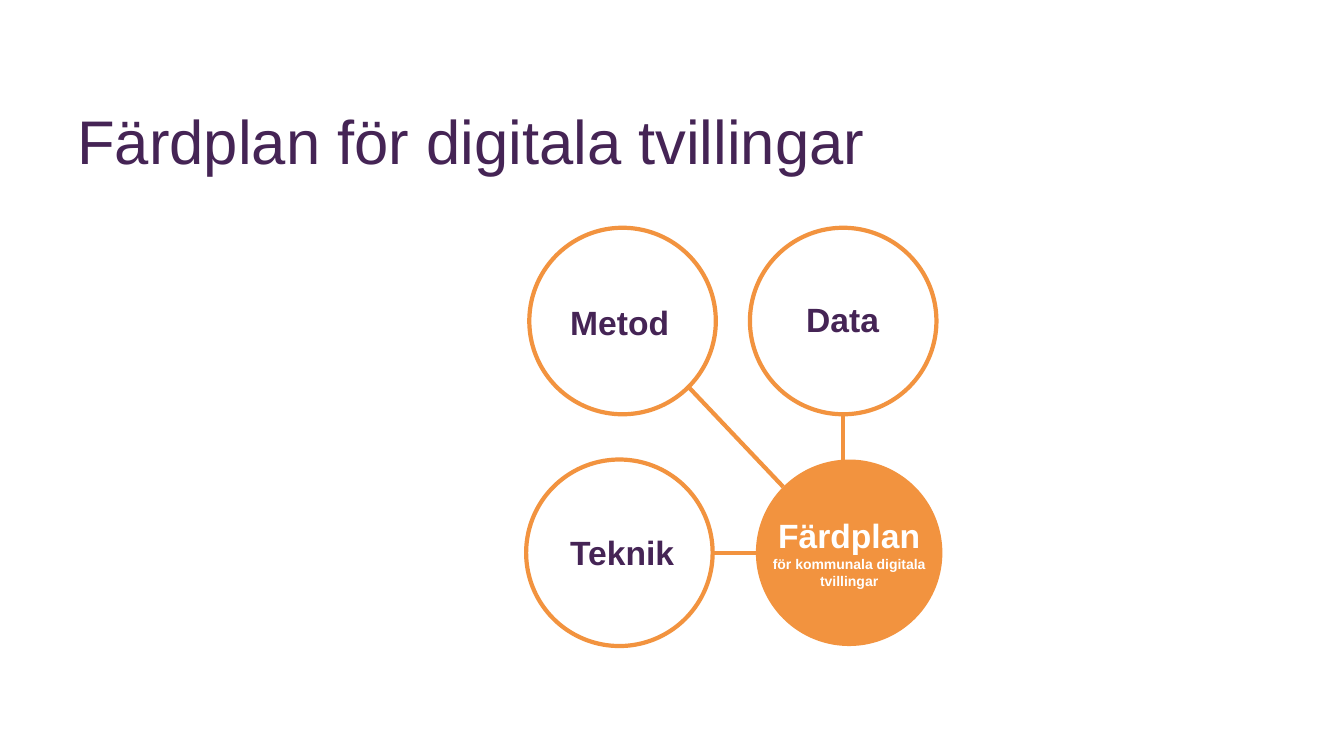
from collections import namedtuple
from dataclasses import dataclass
from math import sqrt

from lxml.etree import SubElement
from pptx import Presentation
from pptx.dml.color import RGBColor
from pptx.enum.shapes import MSO_CONNECTOR as Connector, MSO_SHAPE as Shape
from pptx.enum.text import MSO_ANCHOR as Anchor, MSO_AUTO_SIZE as AutoSize, PP_ALIGN as Align
from pptx.oxml.ns import qn
from pptx.util import Cm, Pt

Box = namedtuple("Box", "left top width height")  # lengths in centimetres


@dataclass(frozen=True)
class Theme:
    font: str = "Arial"
    purple: RGBColor = RGBColor(0x45, 0x24, 0x55)
    orange: RGBColor = RGBColor(0xF2, 0x93, 0x3F)
    white: RGBColor = RGBColor(0xFF, 0xFF, 0xFF)
    title_size: Pt = Pt(44)
    label_size: Pt = Pt(24)
    small_size: Pt = Pt(10)
    stroke: Pt = Pt(3)


THEME = Theme()
DIAMETER = 4.7


def add_text(shapes, box, lines, color, bold=True, align=Align.CENTER):
    """Place a text box whose lines are (text, size) pairs."""
    text_box = shapes.add_textbox(*map(Cm, box))
    frame = text_box.text_frame
    frame.word_wrap = True
    for index, (text, size) in enumerate(lines):
        para = frame.add_paragraph() if index else frame.paragraphs[0]
        para.text = text
        para.alignment = align
        para.font.name = THEME.font
        para.font.size = size
        para.font.bold = bold
        para.font.color.rgb = color
    return frame


def add_title(page, box, text):
    frame = add_text(page.shapes, box, [(text, THEME.title_size)], THEME.purple,
                     bold=False, align=Align.LEFT)
    frame.vertical_anchor = Anchor.BOTTOM
    frame.paragraphs[0].line_spacing = 0.9


def add_circle(shapes, box, filled=False):
    circle = shapes.add_shape(Shape.OVAL, *map(Cm, box))
    circle.shadow.inherit = False
    if filled:
        circle.fill.solid()
        circle.fill.fore_color.rgb = THEME.orange
        circle.line.fill.background()
    else:
        circle.fill.background()
        circle.line.color.rgb = THEME.orange
        circle.line.width = THEME.stroke


def add_topic(page, circle, label, text):
    """Draw an outlined circle; the label box is relative to it."""
    add_circle(page.shapes, circle)
    place = Box(circle.left + label.left, circle.top + label.top, label.width, label.height)
    frame = add_text(page.shapes, place, [(text, THEME.label_size)], THEME.purple)
    frame.auto_size = AutoSize.SHAPE_TO_FIT_TEXT
    return frame


def add_hub(page, circle, heading, detail):
    group = page.shapes.add_group_shape()
    add_circle(group.shapes, circle, filled=True)
    place = Box(circle.left, circle.top + 1.27, circle.width, 2.13)
    frame = add_text(group.shapes, place,
                     [(heading, THEME.label_size), (detail, THEME.small_size)], THEME.white)
    frame.auto_size = AutoSize.SHAPE_TO_FIT_TEXT


def add_link(page, start, end):
    link = page.shapes.add_connector(Connector.STRAIGHT, *map(Cm, (*start, *end)))
    link.line.color.rgb = THEME.orange
    link.line.width = THEME.stroke
    SubElement(link._element.spPr, qn("a:effectLst"))


def rim(circle, across, down):
    """Point on a circle in the direction (across, down) from its centre."""
    reach = circle.width / 2 / sqrt(across ** 2 + down ** 2)
    return (circle.left + circle.width / 2 + across * reach,
            circle.top + circle.height / 2 + down * reach)


def add_roadmap(page, box):
    """Three topics around the hub in the lower right corner."""
    lower = box.top + 5.84
    method = Box(box.left + 0.08, box.top, DIAMETER, DIAMETER)
    data = Box(box.left + 5.64, box.top, DIAMETER, DIAMETER)
    tech = Box(box.left, lower, DIAMETER, DIAMETER)
    hub = Box(box.left + box.width - DIAMETER, lower, DIAMETER, DIAMETER)

    # Circles and labels
    method_label = add_topic(page, method, Box(0.74, 1.68, 3.07, 1.35), "Metod")
    method_label.margin_top = Cm(0.2)
    add_topic(page, data, Box(0.61, 1.68, 3.45, 1.27), "Data")
    add_hub(page, hub, "Färdplan", "för kommunala digitala tvillingar")
    add_topic(page, tech, Box(0.58, 1.7, 3.68, 1.27), "Teknik")

    # Links from the hub
    add_link(page, rim(hub, -1, 0), rim(tech, 1, 0))
    add_link(page, rim(hub, -1, -1), rim(method, 1, 1))
    data_bottom = rim(data, 0, 1)
    add_link(page, (data_bottom[0], hub.top), data_bottom)


def main():
    deck = Presentation()
    deck.slide_width, deck.slide_height = Cm(33.87), Cm(19.05)
    page = deck.slides.add_slide(deck.slide_layouts[6])
    add_title(page, Box(1.7, 0.74, 23.14, 3.86), "Färdplan för digitala tvillingar")
    add_roadmap(page, Box(13.26, 5.74, 10.49, 10.54))
    deck.save("out.pptx")


if __name__ == "__main__":
    main()
